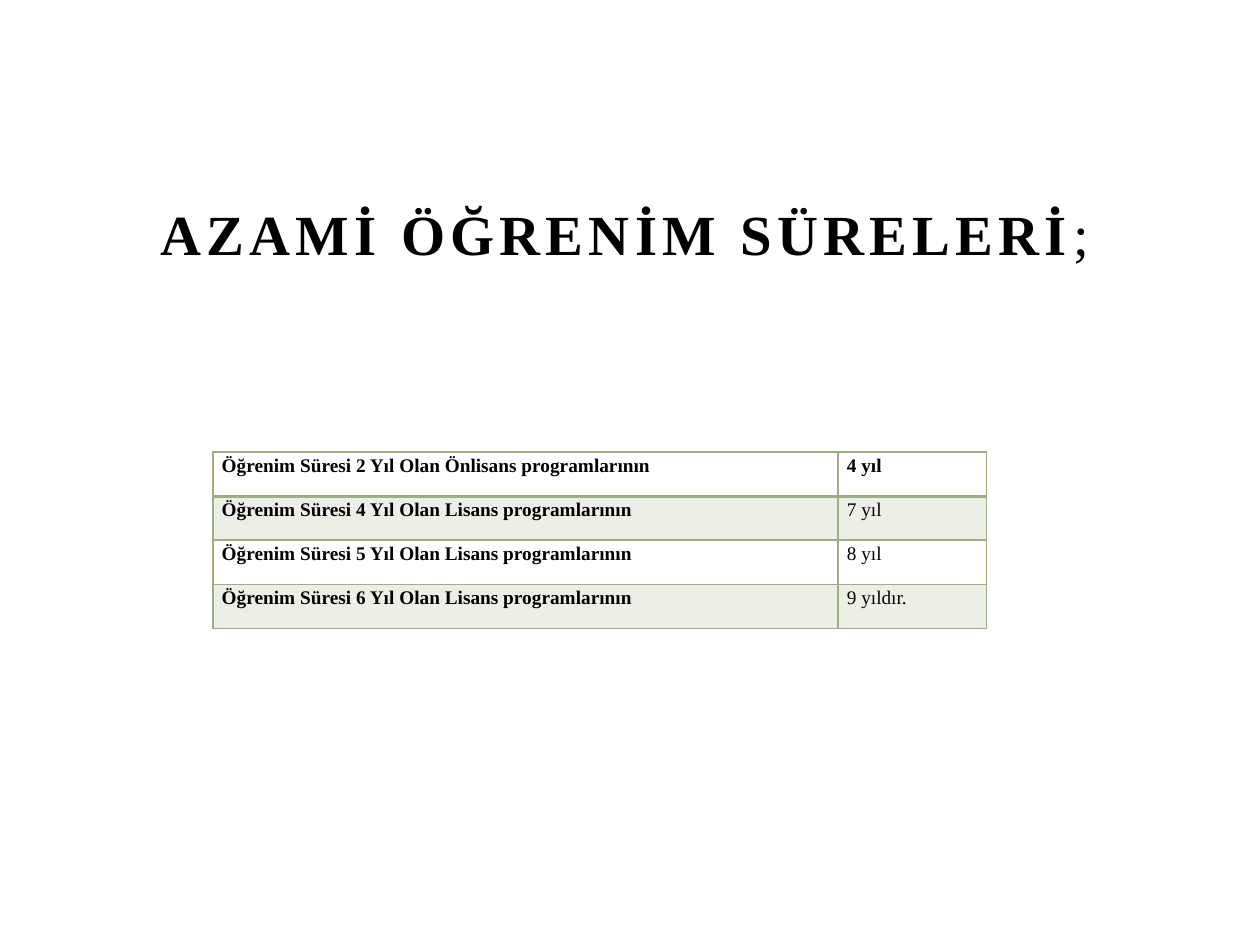
from dataclasses import dataclass

from lxml.etree import SubElement
from pptx import Presentation
from pptx.dml.color import RGBColor
from pptx.enum.text import MSO_ANCHOR as Anchor, PP_ALIGN as Align
from pptx.oxml.ns import qn
from pptx.util import Cm, Pt

FONT = "Times New Roman"
BLACK = "000000"
GREEN = "9CB084"
COLUMN_WIDTHS = (12.6, 3.0)
ROW_HEIGHT = 0.89


@dataclass
class Duration:
    program: str
    limit: str
    limit_bold: bool = False
    shaded: bool = False
    bottom_line: float = 1


DURATIONS = [
    Duration("Öğrenim Süresi 2 Yıl Olan Önlisans programlarının", "4 yıl", limit_bold=True, bottom_line=2),
    Duration("Öğrenim Süresi 4 Yıl Olan Lisans programlarının", "7 yıl", shaded=True),
    Duration("Öğrenim Süresi 5 Yıl Olan Lisans programlarının", "8 yıl"),
    Duration("Öğrenim Süresi 6 Yıl Olan Lisans programlarının", "9 yıldır.", shaded=True),
]


def color(value: str) -> RGBColor:
    return RGBColor.from_string(value)


def set_values(target, values: dict) -> None:
    for name, value in values.items():
        setattr(target, name, value)


def add_span(para, text: str, size: float, bold: bool):
    span = para.add_run()
    span.text = text
    set_values(span.font, {"name": FONT, "size": Pt(size), "bold": bold})
    span.font.color.rgb = color(BLACK)
    return span


def add_title(page) -> None:
    box = page.shapes.add_textbox(Cm(2.69), Cm(3.61), Cm(19.81), Cm(1.9))
    set_values(box.text_frame, {"word_wrap": True, "vertical_anchor": Anchor.BOTTOM})
    para = box.text_frame.paragraphs[0]
    para.alignment = Align.CENTER
    for text, bold in (("AZAMİ ÖĞRENİM SÜRELERİ", True), (";", False)):
        span = add_span(para, text, 32.4, bold)
        span.font._element.set("spc", "300")


def add_border(cell, side: str, width: float) -> None:
    properties = cell._tc.get_or_add_tcPr()
    line = SubElement(properties, qn(f"a:ln{side}"), w=str(Pt(width)))
    fill = SubElement(line, qn("a:solidFill"))
    SubElement(fill, qn("a:srgbClr"), val=GREEN)


def fill_cell(cell, shaded: bool) -> None:
    if not shaded:
        cell.fill.background()
        return
    cell.fill.solid()
    cell.fill.fore_color.rgb = color(GREEN)
    tint = cell._tc.tcPr.find(f".//{qn('a:solidFill')}[last()]")
    tint = cell._tc.tcPr.find(qn("a:solidFill")).find(qn("a:srgbClr"))
    SubElement(tint, qn("a:alpha"), val="20000")


def format_cell(cell, text: str, bold: bool, shaded: bool, borders: dict) -> None:
    set_values(cell, {"margin_left": Cm(0.18), "margin_right": Cm(0.18), "margin_top": 0, "margin_bottom": 0})
    para = cell.text_frame.paragraphs[0]
    para.line_spacing = 1.15
    add_span(para, text, 11, bold)
    for side, width in borders.items():
        add_border(cell, side, width)
    fill_cell(cell, shaded)


def add_durations(page, durations: list[Duration]) -> None:
    frame = page.shapes.add_table(
        len(durations), len(COLUMN_WIDTHS), Cm(4.29), Cm(9.11),
        Cm(sum(COLUMN_WIDTHS)), Cm(ROW_HEIGHT * len(durations)),
    )
    table = frame.table
    set_values(table, {"first_row": False, "horz_banding": False})
    for column, width in zip(table.columns, COLUMN_WIDTHS):
        column.width = Cm(width)
    top_line = 1
    for row, item in zip(table.rows, durations):
        row.height = Cm(ROW_HEIGHT)
        borders = {"L": 1, "R": 1, "T": top_line, "B": item.bottom_line}
        entries = ((item.program, True), (item.limit, item.limit_bold))
        for cell, (text, bold) in zip(row.cells, entries):
            format_cell(cell, text, bold, item.shaded, borders)
        top_line = item.bottom_line


def main() -> None:
    """Build the slide of maximum study durations."""
    deck = Presentation()
    set_values(deck, {"slide_width": Cm(25.4), "slide_height": Cm(19.05)})
    page = deck.slides.add_slide(deck.slide_layouts[6])
    add_title(page)
    add_durations(page, DURATIONS)
    deck.save("out.pptx")


if __name__ == "__main__":
    main()
